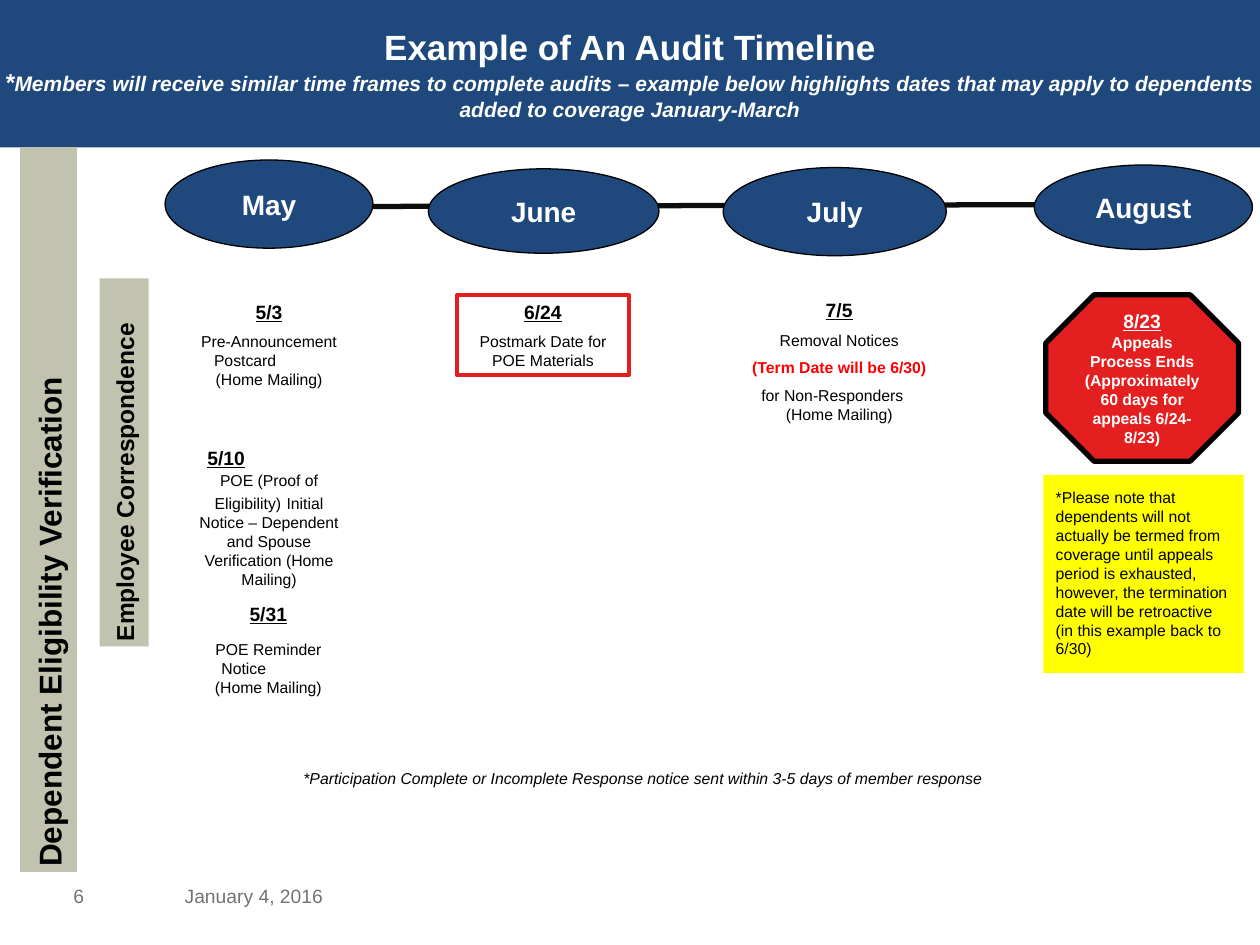
import pptx
import pptx.util
import pptx.dml.color
import pptx.enum.shapes
import pptx.enum.text
import pptx.oxml.ns
import lxml.etree

SLIDE_WIDTH = pptx.util.Inches(10)
SLIDE_HEIGHT = pptx.util.Inches(7.5)
COLUMNS, ROWS = 100, 75
NAVY, RED, STONE = "1F497D", "E41F1F", "C2C3AF"
WHITE, BLACK, GREY = "FFFFFF", "000000", "737373"
SHAPES = pptx.enum.shapes.MSO_SHAPE
ANCHOR = pptx.enum.text.MSO_ANCHOR
ALIGN = pptx.enum.text.PP_ALIGN
NARROW_INSETS = (0.08, 0.04)
DATE = {"size": 11, "bold": True, "underline": True}


def color(hex_string):
    return pptx.dml.color.RGBColor.from_string(hex_string)


def across(columns):
    return round(SLIDE_WIDTH * columns / COLUMNS)


def down(rows):
    return round(SLIDE_HEIGHT * rows / ROWS)


def place(column, row, columns, rows):
    return across(column), down(row), across(columns), down(rows)


def add_run(paragraph, text, size=9, fill=BLACK, bold=False, italic=False, underline=False):
    run = paragraph.add_run()
    run.text = text
    font = run.font
    font.name = "Arial"
    font.size = pptx.util.Pt(size)
    font.bold, font.italic, font.underline = bold, italic, underline
    font.color.rgb = color(fill)


def write_text(shape, paragraphs, align=ALIGN.CENTER, anchor=ANCHOR.TOP,
               insets=NARROW_INSETS, wrap=True, **run_format):
    frame = shape.text_frame
    frame.word_wrap = wrap
    frame.auto_size = pptx.enum.text.MSO_AUTO_SIZE.NONE
    frame.vertical_anchor = anchor
    frame.margin_left = frame.margin_right = pptx.util.Inches(insets[0])
    frame.margin_top = frame.margin_bottom = pptx.util.Inches(insets[1])
    for index, (content, own_format) in enumerate(paragraphs):
        paragraph = frame.paragraphs[0] if index == 0 else frame.add_paragraph()
        paragraph.alignment = align
        own_format = dict(own_format)
        paragraph.space_before = pptx.util.Pt(own_format.pop("before", 0))
        properties = paragraph._p.get_or_add_pPr()
        properties.set("marL", "0")
        properties.set("marR", str(across(own_format.pop("right_indent", 0))))
        properties.set("indent", "0")
        runs = [(content, {})] if isinstance(content, str) else content
        for text, extra in runs:
            add_run(paragraph, text, **{**run_format, **own_format, **extra})


def add_box(slide, kind, position, fill=None, line=None, line_width=0.75):
    shape = slide.shapes.add_shape(kind, *place(*position))
    shape.shadow.inherit = False
    if fill:
        shape.fill.solid()
        shape.fill.fore_color.rgb = color(fill)
    else:
        shape.fill.background()
    if line:
        shape.line.color.rgb = color(line)
        shape.line.width = pptx.util.Pt(line_width)
    else:
        shape.line.fill.background()
    return shape


def add_note(slide, position, paragraphs, **text_format):
    box = slide.shapes.add_textbox(*place(*position))
    write_text(box, paragraphs, **text_format)


def add_header(slide):
    title = slide.shapes.title
    title.left, title.top, title.width, title.height = place(0, 0, 100, 11.7)
    title.fill.solid()
    title.fill.fore_color.rgb = color(NAVY)
    subtitle = ("Members will receive similar time frames to complete audits – "
                "example below highlights dates that may apply to dependents")
    write_text(title, [
        ("Example of An Audit Timeline", {"size": 20}),
        ([("*", {"size": 14}), (subtitle, {})], {"italic": True}),
        ("added to coverage January-March", {"italic": True}),
    ], anchor=ANCHOR.MIDDLE, insets=(0, 0), wrap=False, size=12, fill=WHITE, bold=True)


def add_sidebar(slide, position, label, size):
    bar = add_box(slide, SHAPES.RECTANGLE, position, fill=STONE)
    write_text(bar, [(label, {})], align=ALIGN.LEFT, size=size, bold=True)
    bar.text_frame._txBody.find(pptx.oxml.ns.qn("a:bodyPr")).set("vert", "vert270")


def add_timeline(slide, months):
    line = slide.shapes.add_connector(
        pptx.enum.shapes.MSO_CONNECTOR.STRAIGHT,
        across(25), down(16.4), across(99.4), down(16.2))
    line.line.color.rgb = color("0D0D0D")
    line.line.width = pptx.util.Pt(3)
    lxml.etree.SubElement(line._element.spPr, pptx.oxml.ns.qn("a:effectLst"))
    for month, position in months:
        oval = add_box(slide, SHAPES.OVAL, position, fill=NAVY, line=BLACK)
        write_text(oval, [(month, {})], anchor=ANCHOR.MIDDLE, wrap=False,
                   size=16, fill=WHITE, bold=True)


def add_events(slide):
    add_note(slide, (14.3, 23.4, 14.1, 7.9), [
        ("5/3", DATE),
        ("Pre-Announcement", {"before": 5}),
        ("Postcard", {"right_indent": 3.8}),
        ("(Home Mailing)", {}),
    ])
    add_note(slide, (14.3, 35, 14.1, 10.5), [
        ("5/10", {**DATE, "right_indent": 6.8}),
        ([("POE (Proof of Eligibility)", {}),
          (" ", {"size": 11}),
          ("Initial Notice – Dependent and Spouse Verification (Home Mailing)", {})],
         {"before": 1}),
    ])
    add_note(slide, (15, 47.4, 12.6, 8.4), [
        ("5/31", DATE),
        ("POE Reminder", {"before": 8}),
        ("Notice", {"right_indent": 3.9}),
        ("(Home Mailing)", {}),
    ])
    add_note(slide, (58.7, 23.3, 15.8, 10.9), [
        ("7/5", DATE),
        ("Removal Notices", {"before": 5}),
        ("(Term Date will be 6/30)", {"before": 5, "fill": "FF0000", "bold": True}),
        ("for Non-Responders", {"before": 5, "right_indent": 1.1}),
        ("(Home Mailing)", {}),
    ])
    postmark = add_box(slide, SHAPES.RECTANGLE, (36.3, 23.4, 13.6, 6.4),
                       line=RED, line_width=2.25)
    write_text(postmark, [("6/24", DATE), ("Postmark Date for POE Materials", {"before": 5})])


def add_appeals(slide):
    octagon = add_box(slide, SHAPES.OCTAGON, (83, 23.4, 15.3, 13.2),
                      fill=RED, line=BLACK, line_width=3)
    octagon.adjustments[0] = 0.29
    write_text(octagon, [
        ("8/23", DATE),
        ("Appeals Process Ends", {}),
        ("(Approximately 60 days for appeals 6/24-8/23)", {}),
    ], anchor=ANCHOR.MIDDLE, insets=(0.1, 0.05), fill=WHITE, bold=True)
    notice = add_box(slide, SHAPES.RECTANGLE, (82.8, 37.7, 15.9, 15.7), fill="FFFF00")
    write_text(notice, [(
        "*Please note that dependents will not actually be termed from coverage until "
        "appeals period is exhausted, however, the termination date will be retroactive "
        "(in this example back to 6/30)", {})], align=ALIGN.LEFT, insets=(0.1, 0.1))


def main():
    presentation = pptx.Presentation()
    presentation.slide_width = SLIDE_WIDTH
    presentation.slide_height = SLIDE_HEIGHT
    slide = presentation.slides.add_slide(presentation.slide_layouts[5])
    add_header(slide)
    add_sidebar(slide, (1.6, 11.7, 4.5, 57.5), "Dependent Eligibility Verification", 18)
    add_sidebar(slide, (7.9, 22.1, 3.9, 29.2), "Employee Correspondence", 14)
    add_timeline(slide, [
        ("May", (13.1, 12.7, 16.5, 7)),
        ("June", (34, 13.4, 18.3, 6.7)),
        ("July", (57.4, 13.3, 17.7, 7)),
        ("August", (82.1, 13.1, 17.3, 6.7)),
    ])
    add_events(slide)
    add_appeals(slide)
    add_note(slide, (23.1, 60.5, 58.3, 2.7), [(
        "*Participation Complete or Incomplete Response notice sent within "
        "3-5 days of member response", {})],
        align=ALIGN.LEFT, insets=(0.1, 0.05), italic=True)
    for text, column, columns in (("6", 3.3, 5.9), ("January 4, 2016", 11.7, 16.9)):
        add_note(slide, (column, 68.9, columns, 4.4), [(text, {})],
                 anchor=ANCHOR.MIDDLE, insets=(0.11, 0.06), size=11, fill=GREY)
    presentation.save("out.pptx")


if __name__ == "__main__":
    main()
